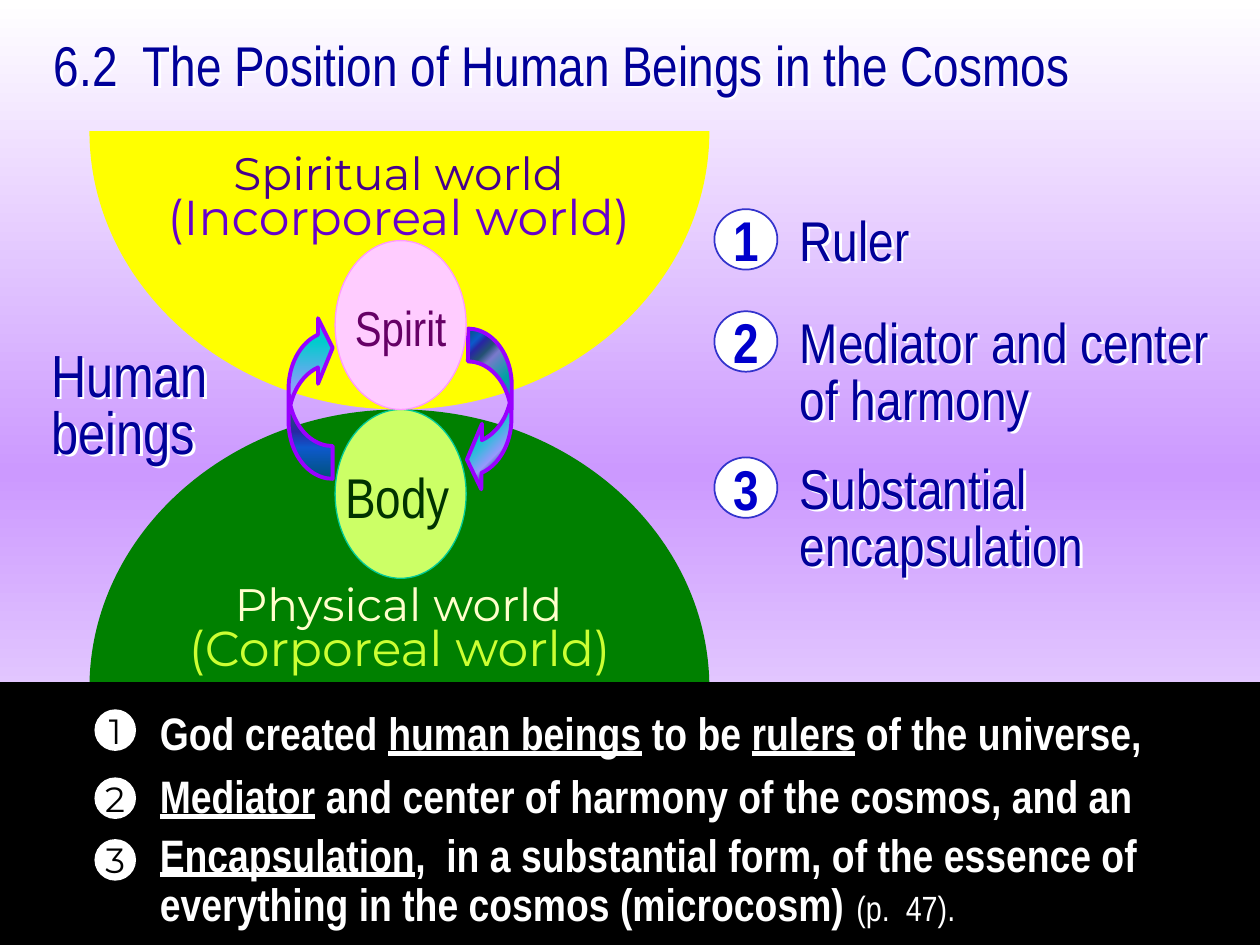
from lxml import etree
from pptx import Presentation, util as u
from pptx.dml.color import RGBColor
from pptx.enum import shapes, text
from pptx.oxml.ns import qn

NARROW, ROUND = "Arial Narrow", "Montserrat"
NAVY = "000099"
LEFT, CENTER, RIGHT = text.PP_ALIGN.LEFT, text.PP_ALIGN.CENTER, text.PP_ALIGN.RIGHT
LEFT_ARROW_STOPS = [(0, "3399FF"), (16, "00CCCC"), (47, "9999FF"), (60, "2E6792"),
                    (71, "3333CC"), (81, "1170FF"), (100, "006699")]
RIGHT_ARROW_STOPS = [(0, "006699"), (10, "1170FF"), (14, "3333CC"), (20, "2E6792"),
                     (26, "9999FF"), (42, "00CCCC"), (50, "3399FF"), (58, "00CCCC"),
                     (74, "9999FF"), (80, "2E6792"), (86, "3333CC"), (90, "1170FF")]


def color(value):
    """Turn a hex string into a colour."""
    return RGBColor.from_string(value)


def set_gradient(fill, element, stops, angle):
    """Fill with a linear gradient that stays fixed when the shape turns."""
    fill.gradient()
    fill.gradient_angle = 360 - angle
    stop_list = next(element.iter(qn("a:gsLst")))
    stop_list.getparent().set("rotWithShape", "0")
    for old_stop in list(stop_list):
        stop_list.remove(old_stop)
    for position, value in stops:
        stop = etree.SubElement(stop_list, qn("a:gs"), pos=str(position * 1000))
        etree.SubElement(stop, qn("a:srgbClr"), val=value)


def add_text_shadow(shape):
    """Put a small white shadow behind the text of a box."""
    effects = etree.SubElement(shape.element.spPr, qn("a:effectLst"))
    shadow = etree.SubElement(effects, qn("a:outerShdw"), dist="25400", dir="2700000",
                              algn="ctr", rotWithShape="0")
    etree.SubElement(shadow, qn("a:srgbClr"), val="FFFFFF")


def style_shape(shape, fill=None, line=None, width=0.75):
    """Set the fill and line of a shape and drop its shadow."""
    shape.shadow.inherit = False
    if fill:
        shape.fill.solid()
        shape.fill.fore_color.rgb = color(fill)
    if line:
        shape.line.color.rgb = color(line)
        shape.line.width = u.Pt(width)
    else:
        shape.line.fill.background()


def add_runs(paragraph, runs, font, size, value, bold=False):
    """Add runs given as (words, changed font settings)."""
    for words, changes in runs:
        run = paragraph.add_run()
        run.text = words
        settings = {"name": font, "size": size, "bold": bold, **changes}
        settings["size"] = u.Pt(settings["size"])
        for name, setting in settings.items():
            setattr(run.font, name, setting)
        run.font.color.rgb = color(value)


def add_text(slide, box, paragraphs, font, size, value, align=LEFT, spacing=None,
             bold=False, wrap=True, shadow=False):
    """Add a text box whose paragraphs are strings or lists of runs."""
    shape = slide.shapes.add_textbox(*map(u.Inches, box))
    frame = shape.text_frame
    frame.word_wrap = wrap
    frame.auto_size = text.MSO_AUTO_SIZE.SHAPE_TO_FIT_TEXT
    for index, content in enumerate(paragraphs):
        paragraph = frame.add_paragraph() if index else frame.paragraphs[0]
        paragraph.alignment = align
        if spacing:
            paragraph.line_spacing = spacing
        runs = [(content, {})] if isinstance(content, str) else content
        add_runs(paragraph, runs, font, size, value, bold)
    if shadow:
        add_text_shadow(shape)


def add_shape(slide, kind, box, fill=None, line=None, width=0.75):
    """Add a preset shape."""
    shape = slide.shapes.add_shape(kind, *map(u.Inches, box))
    style_shape(shape, fill, line, width)
    return shape


def add_number(slide, box, number, font, size, value, bold=False, line=None):
    """Add a white disc with a number in it."""
    disc = add_shape(slide, shapes.MSO_SHAPE.OVAL, box, "FFFFFF", line, 1)
    frame = disc.text_frame
    frame.word_wrap = False
    frame.vertical_anchor = text.MSO_ANCHOR.MIDDLE
    frame.paragraphs[0].alignment = CENTER
    add_runs(frame.paragraphs[0], [(str(number), {})], font, size, value, bold)


def half_ellipse(scale, side):
    """Give start and curve points of an upper half ellipse, begun at a side (-1 left, 1 right)."""
    unit = [(1, 0), (1, 0.55), (0.55, 1), (0, 1), (-0.55, 1), (-1, 0.55), (-1, 0)]
    return [(u.Inches(3.17 + side * scale * 2.46 * x), u.Inches(5.46 - scale * 2.21 * y))
            for x, y in unit]


def join_curve(lines):
    """Turn three line steps into one curve through their points."""
    curve = etree.Element(qn("a:cubicBezTo"))
    lines[0].addprevious(curve)
    for line in lines:
        curve.append(line[0])
        line.getparent().remove(line)


def add_arch(slide, top, fill, flipped=False):
    """Add a curved arch that fills the upper half of its box, or the lower half if flipped."""
    inner, outer = half_ellipse(0.5, -1), half_ellipse(1, 1)
    builder = slide.shapes.build_freeform(*inner[0])
    builder.add_line_segments(inner[1:] + outer, close=True)
    arch = builder.convert_to_shape()
    outline = next(arch.element.iter(qn("a:path")))
    lines = outline.findall(qn("a:lnTo"))
    for start in (0, 3, 7, 10):
        join_curve(lines[start:start + 3])
    outline.set("h", str(2 * int(outline.get("h"))))
    arch.top, arch.height = u.Inches(top), 2 * arch.height
    if flipped:
        arch.element.spPr.find(qn("a:xfrm")).set("flipV", "1")
    style_shape(arch, fill)


def add_arrow(slide, left, top, rotation, stops, angle):
    """Add one curved arrow between spirit and body."""
    arrow = add_shape(slide, shapes.MSO_SHAPE.CURVED_LEFT_ARROW, (left, top, 0.35, 1.3),
                      line="9900FF", width=2.25)
    for index, value in enumerate((0.743, 1.485, 0.333)):
        arrow.adjustments[index] = value
    arrow.rotation = rotation
    set_gradient(arrow.fill, arrow.element, stops, angle)


def add_worlds(slide):
    """Draw the two worlds with their names."""
    for arch_top, core_top, fill, flipped in ((3.25, 3.91, "008000", False),
                                              (-1.17, 1.04, "FFFF00", True)):
        add_arch(slide, arch_top, fill, flipped)
        add_shape(slide, shapes.MSO_SHAPE.RECTANGLE, (1.58, core_top, 3.18, 1.55), fill)
    for box, words, size, value in (
            ((1.21, 4.85, 3.92, 0.57), "(Corporeal world)", 28, "CCFF33"),
            ((1.58, 1.1, 3.17, 0.53), "Spiritual world", 26, "46008C"),
            ((1, 1.43, 4.33, 0.57), "(Incorporeal world)", 28, "6600CC"),
            ((1.58, 4.52, 3.17, 0.53), "Physical world", 26, "FFFFCC")):
        add_text(slide, box, [words], ROUND, size, value, CENTER)


def add_human_being(slide):
    """Draw spirit and body with the arrows between them."""
    add_arrow(slide, 2.29, 2.5, 180, LEFT_ARROW_STOPS, 90)
    add_arrow(slide, 3.71, 2.61, 0.6, RIGHT_ARROW_STOPS, 45)
    for top, fill, line in ((3.25, "CCFF66", "00CC99"), (1.91, "FFCCFF", "FF99FF")):
        add_shape(slide, shapes.MSO_SHAPE.OVAL, (2.66, top, 1.04, 1.34), fill, line)
    add_text(slide, (2.6, 3.62, 1.11, 0.63), ["Body"], NARROW, 32, "003300", CENTER, wrap=False)
    add_text(slide, (2.64, 2.31, 1.08, 0.57), ["Spirit"], NARROW, 28, "660066", CENTER, wrap=False)


def add_positions(slide):
    """List the three positions of human beings beside the worlds."""
    positions = ((1.66, (6.25, 1.58, 1.2, 0.63), ["Ruler"], None),
                 (2.47, (6.25, 2.47, 3.58, 1.01), ["Mediator and center of harmony"], 0.85),
                 (3.63, (6.25, 3.63, 2.92, 1.01), ["Substantial", "encapsulation"], 0.85))
    for number, (top, box, lines, spacing) in enumerate(positions, 1):
        add_number(slide, (5.67, top, 0.5, 0.48), number, NARROW, 32, "0000CC", True, "3333CC")
        add_text(slide, box, lines, NARROW, 32, NAVY, spacing=spacing, shadow=True)
    add_text(slide, (0, 2.74, 1.75, 1.01), ["Human", [("beings", {}), (" ", {"size": 32})]],
             NARROW, 34, NAVY, RIGHT, 0.8, shadow=True)


def add_summary(slide):
    """Write the three statements on the black band."""
    underlined = {"underline": True}
    statements = (
        (5.63, (1.17, 5.55, 8.08, 0.53), None,
         [("God created ", {}), ("human beings", underlined), (" to be ", {}),
          ("rulers", underlined), (" of the universe,", {})]),
        (6.17, (1.17, 6.05, 8, 0.53), None,
         [("Mediator", underlined), (" and center of harmony of the cosmos, and an", {})]),
        (6.66, (1.17, 6.58, 8.08, 0.87), 0.85,
         [("Encapsulation", underlined),
          (",  in a substantial form, of the essence of everything in the cosmos (microcosm)", {}),
          (" ", {"size": 28}), ("(p.  47).", {"size": 20, "bold": False})]))
    for number, (top, box, spacing, runs) in enumerate(statements, 1):
        add_text(slide, box, [runs], NARROW, 26, "FFFFFF", spacing=spacing, bold=True)
        add_number(slide, (0.75, top, 0.33, 0.33), number, ROUND, 20, "000000")


def main():
    """Build the slide and save it."""
    presentation = Presentation()
    presentation.slide_width, presentation.slide_height = u.Inches(10), u.Inches(7.5)
    slide = presentation.slides.add_slide(presentation.slide_layouts[6])
    set_gradient(slide.background.fill, slide.element,
                 [(0, "FFFFFF"), (50, "CC99FF"), (100, "FFFFFF")], 90)
    add_worlds(slide)
    add_text(slide, (0.33, 0.23, 9.08, 0.61), ["6.2  The Position of Human Beings in the Cosmos"],
             NARROW, 32, NAVY, spacing=0.95, shadow=True)
    add_shape(slide, shapes.MSO_SHAPE.RECTANGLE, (0, 5.42, 10, 2.08), "000000", "000000")
    add_positions(slide)
    add_summary(slide)
    add_human_being(slide)
    presentation.save("out.pptx")


if __name__ == "__main__":
    main()
